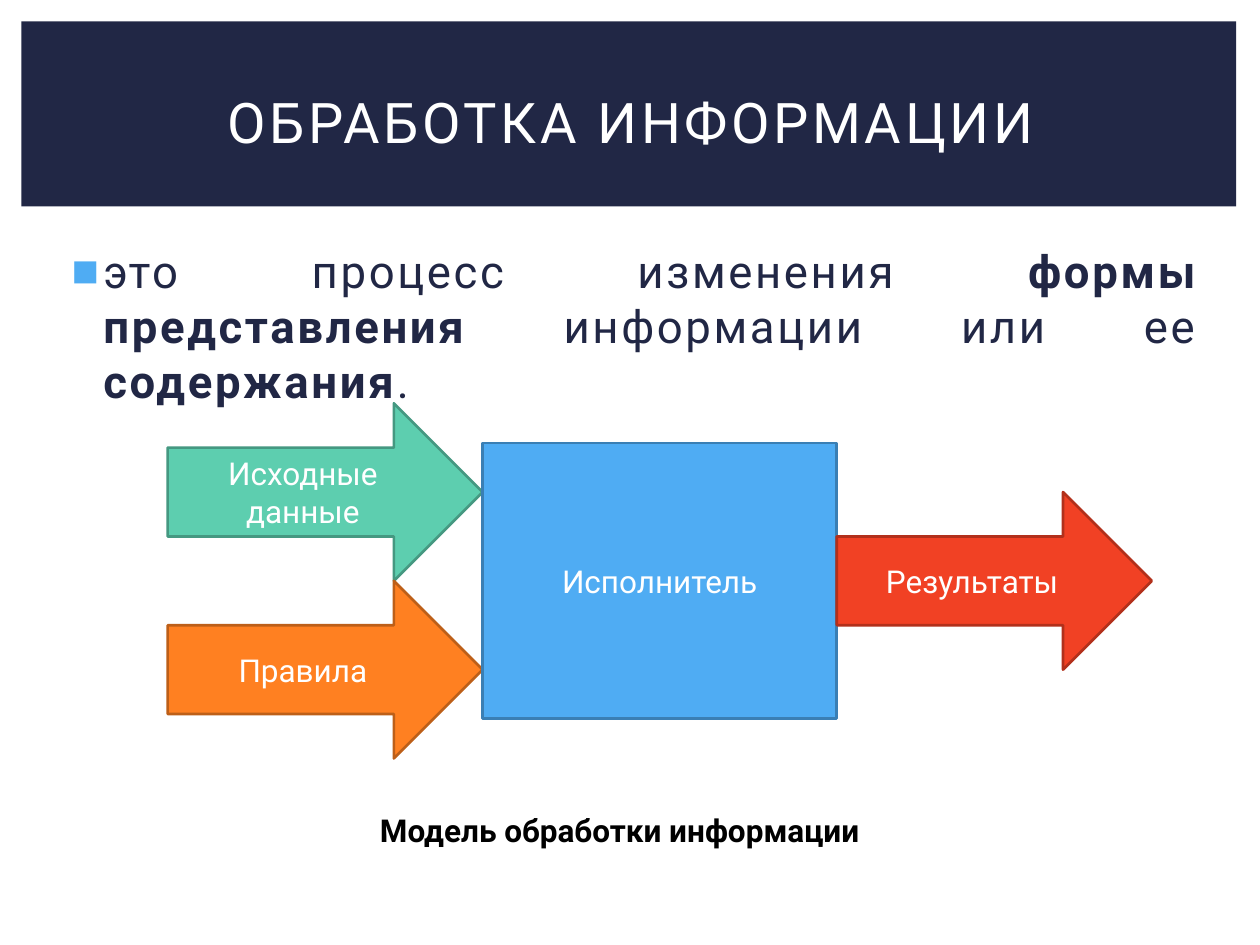
import pptx
import pptx.util
import pptx.dml.color
import pptx.enum.shapes
import pptx.enum.text
from dataclasses import dataclass
from lxml import etree

Cm = pptx.util.Cm
Pt = pptx.util.Pt
SHAPE = pptx.enum.shapes.MSO_SHAPE
ALIGN = pptx.enum.text.PP_ALIGN
ANCHOR = pptx.enum.text.MSO_ANCHOR
AUTO_SIZE = pptx.enum.text.MSO_AUTO_SIZE


@dataclass(frozen=True)
class Theme:
    font: str = "Roboto"
    navy: str = "212745"
    white: str = "FFFFFF"
    black: str = "000000"
    blue: str = "4FACF3"
    blue_line: str = "3A7FB4"
    green: str = "5DCEAF"
    green_line: str = "459881"
    orange: str = "FF8021"
    orange_line: str = "BD5F18"
    red: str = "F14124"
    red_line: str = "B2301B"
    title_size: float = 32
    body_size: float = 26
    label_size: float = 18
    line_width: float = 1.5


THEME = Theme()

TITLE = "ОБРАБОТКА ИНФОРМАЦИИ"
DEFINITION = [  # (text, bold)
    ("это процесс изменения ", False),
    ("формы представления ", True),
    ("информации или ее ", False),
    ("содержания", True),
    (".", False),
]
CAPTION = "Модель обработки информации"
INPUTS = [
    ("Исходные данные", THEME.green, THEME.green_line),
    ("Правила", THEME.orange, THEME.orange_line),
]
EXECUTOR = ("Исполнитель", THEME.blue, THEME.blue_line)
RESULT = ("Результаты", THEME.red, THEME.red_line)

# Centimetres
DIAGRAM_LEFT, DIAGRAM_TOP = 3.38, 8.13
ARROW_W, ARROW_H = 6.35, 3.58
EXECUTOR_W, EXECUTOR_H = 7.14, 5.56


def rgb(color):
    return pptx.dml.color.RGBColor.from_string(color)


def place(shape, left, top, width, height):
    shape.left, shape.top = Cm(left), Cm(top)
    shape.width, shape.height = Cm(width), Cm(height)


def write(paragraph, runs, size, color, align, spacing=0):
    """Fill a paragraph with (text, bold) runs; spacing is in points."""
    paragraph.alignment = align
    paragraph.space_before = Pt(0)
    for text, bold in runs:
        run = paragraph.add_run()
        run.text = text
        run.font.name = THEME.font
        run.font.size = Pt(size)
        run.font.bold = bold
        run.font.color.rgb = rgb(color)
        if spacing:
            run.font._element.set("spc", str(int(spacing * 100)))


def add_square_bullet(paragraph, color):
    properties = paragraph._p.get_or_add_pPr()
    properties.set("marL", str(Cm(0.76)))
    properties.set("indent", str(-Cm(0.64)))
    ns = "{http://schemas.openxmlformats.org/drawingml/2006/main}"
    bullet_color = etree.SubElement(properties, ns + "buClr")
    etree.SubElement(bullet_color, ns + "srgbClr", val=color)
    etree.SubElement(properties, ns + "buFont", typeface="Arial")
    etree.SubElement(properties, ns + "buChar", char="■")


def add_block(slide, kind, content, left, top, width, height):
    label, fill, line = content
    block = slide.shapes.add_shape(kind, Cm(left), Cm(top), Cm(width), Cm(height))
    block.shadow.inherit = False
    block.fill.solid()
    block.fill.fore_color.rgb = rgb(fill)
    block.line.color.rgb = rgb(line)
    block.line.width = Pt(THEME.line_width)
    frame = block.text_frame
    frame.word_wrap = True
    frame.vertical_anchor = ANCHOR.MIDDLE
    write(frame.paragraphs[0], [(label, False)], THEME.label_size,
          THEME.white, ALIGN.CENTER)


def add_heading(slide):
    band = slide.shapes.add_shape(SHAPE.RECTANGLE, Cm(0.43), Cm(0.43),
                                  Cm(24.49), Cm(3.73))
    band.shadow.inherit = False
    band.fill.solid()
    band.fill.fore_color.rgb = rgb(THEME.navy)
    band.line.fill.background()
    slide.shapes._spTree.insert(2, band._element)  # behind the title

    title = slide.shapes.title
    place(title, 1.07, 0.99, 23.29, 2.92)
    title.text_frame.auto_size = AUTO_SIZE.NONE
    title.text_frame.vertical_anchor = ANCHOR.MIDDLE
    write(title.text_frame.paragraphs[0], [(TITLE, False)], THEME.title_size,
          THEME.white, ALIGN.CENTER, spacing=2)


def add_definition(slide):
    body = slide.placeholders[1]
    place(body, 1.07, 4.78, 23.34, 12.24)
    body.text_frame.auto_size = AUTO_SIZE.NONE
    paragraph = body.text_frame.paragraphs[0]
    add_square_bullet(paragraph, THEME.blue)
    write(paragraph, DEFINITION, THEME.body_size, THEME.navy,
          ALIGN.JUSTIFY, spacing=1.5)


def add_diagram(slide):
    middle = DIAGRAM_TOP + len(INPUTS) * ARROW_H / 2
    executor_left = DIAGRAM_LEFT + ARROW_W
    for row, content in enumerate(INPUTS):
        add_block(slide, SHAPE.RIGHT_ARROW, content, DIAGRAM_LEFT,
                  DIAGRAM_TOP + row * ARROW_H, ARROW_W, ARROW_H)
    add_block(slide, SHAPE.RECTANGLE, EXECUTOR, executor_left,
              middle - EXECUTOR_H / 2, EXECUTOR_W, EXECUTOR_H)
    add_block(slide, SHAPE.RIGHT_ARROW, RESULT, executor_left + EXECUTOR_W,
              middle - ARROW_H / 2, ARROW_W, ARROW_H)


def add_caption(slide):
    caption = slide.shapes.add_textbox(Cm(3.96), Cm(16.23), Cm(17.07), Cm(1.02))
    caption.text_frame.word_wrap = True
    caption.text_frame.auto_size = AUTO_SIZE.SHAPE_TO_FIT_TEXT
    write(caption.text_frame.paragraphs[0], [(CAPTION, True)],
          THEME.label_size, THEME.black, ALIGN.CENTER)


def main():
    deck = pptx.Presentation()
    deck.slide_width, deck.slide_height = Cm(25.4), Cm(19.05)
    slide = deck.slides.add_slide(deck.slide_layouts[1])
    add_heading(slide)
    add_definition(slide)
    add_caption(slide)
    add_diagram(slide)
    deck.save("out.pptx")


if __name__ == "__main__":
    main()
